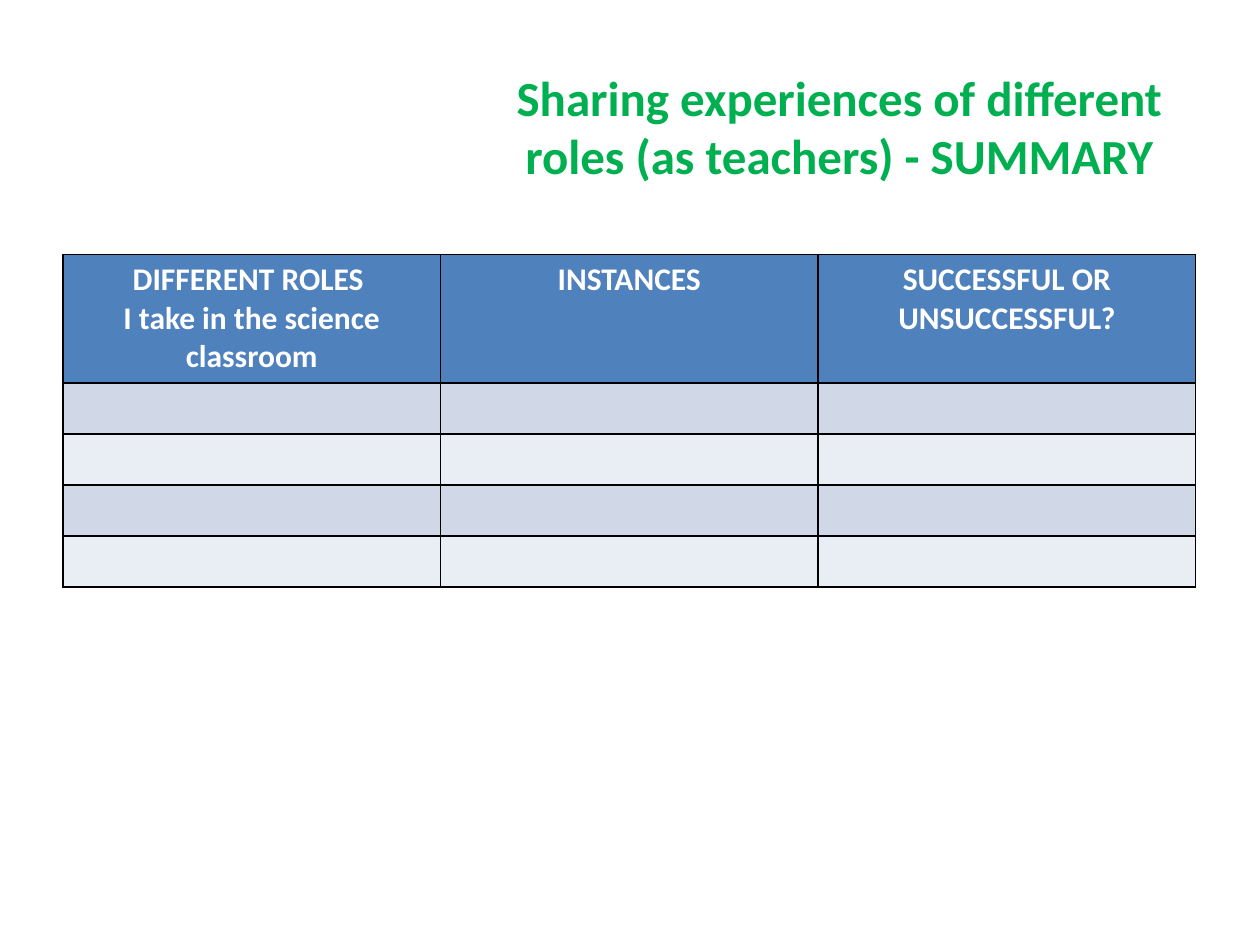
from lxml.etree import SubElement
from pptx import Presentation
from pptx.dml.color import RGBColor
from pptx.enum.text import MSO_ANCHOR, PP_ALIGN
from pptx.oxml.ns import qn
from pptx.util import Inches, Pt

HEADERS = [
    "DIFFERENT ROLES \nI take in the science classroom",
    "INSTANCES",
    "SUCCESSFUL OR UNSUCCESSFUL?",
]
HEADER_FILL = "4F81BD"
BAND_FILLS = ["D0D8E8", "E9EDF4"]
BODY_ROWS = 4
HEADER_HEIGHT = 1.02


def color(value):
    return RGBColor.from_string(value)


def format_text(frame, size, value):
    for para in frame.paragraphs:
        para.alignment = PP_ALIGN.CENTER
        for span in para.runs:
            span.font.name = "Calibri"
            span.font.size = Pt(size)
            span.font.bold = True
            span.font.color.rgb = color(value)


def add_title(page, left, top, width, height):
    box = page.shapes.add_textbox(
        Inches(left), Inches(top), Inches(width), Inches(height)
    )
    frame = box.text_frame
    frame.word_wrap = True
    frame.vertical_anchor = MSO_ANCHOR.MIDDLE
    frame.text = "Sharing experiences of different roles (as teachers) - SUMMARY"
    format_text(frame, 28, "00B050")


def style_cell(cell, fill):
    properties = cell._tc.get_or_add_tcPr()
    for side in ("lnL", "lnR", "lnT", "lnB"):
        line = SubElement(properties, qn(f"a:{side}"), w=str(Pt(1)))
        solid = SubElement(line, qn("a:solidFill"))
        SubElement(solid, qn("a:srgbClr"), val="000000")
    cell.fill.solid()
    cell.fill.fore_color.rgb = color(fill)


def add_roles_table(page, left, top, width, height):
    table = page.shapes.add_table(
        BODY_ROWS + 1, len(HEADERS),
        Inches(left), Inches(top), Inches(width), Inches(height),
    ).table
    body_height = (height - HEADER_HEIGHT) / BODY_ROWS
    for index, row in enumerate(table.rows):
        row.height = Inches(body_height if index else HEADER_HEIGHT)
        fill = BAND_FILLS[(index - 1) % 2] if index else HEADER_FILL
        for cell in row.cells:
            style_cell(cell, fill)
    for cell, text in zip(table.rows[0].cells, HEADERS):
        cell.text_frame.text = text
        format_text(cell.text_frame, 18, "FFFFFF")


def main():
    deck = Presentation()
    deck.slide_width = Inches(10)
    deck.slide_height = Inches(7.5)
    page = deck.slides.add_slide(deck.slide_layouts[6])
    add_title(page, 3.82, 0.3, 5.68, 1.4)
    add_roles_table(page, 0.5, 2.02, 8.99, 2.64)
    deck.save("out.pptx")


if __name__ == "__main__":
    main()
